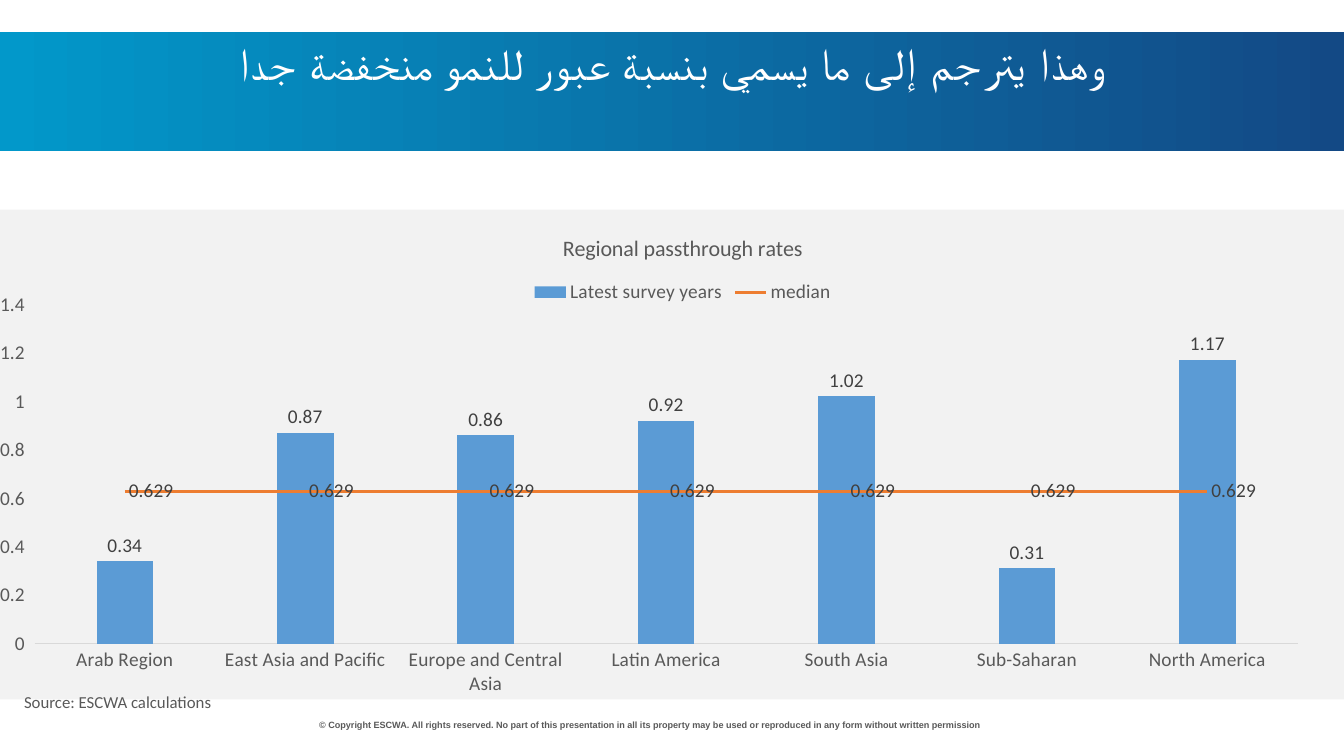
"""Build the slide on regional passthrough rates."""
from pptx import Presentation
from pptx.chart.data import CategoryChartData
from pptx.dml.color import RGBColor
from pptx.enum import chart as ch, shapes, text
from pptx.oxml import parse_xml
from pptx.oxml.ns import nsdecls, qn
from pptx.util import Inches, Pt
from lxml import etree

WHITE = RGBColor(0xFF, 0xFF, 0xFF)
CYAN = RGBColor(0x02, 0x98, 0xCA)
NAVY = RGBColor(0x13, 0x49, 0x85)
PANEL = RGBColor(0xF2, 0xF2, 0xF2)
GREY = RGBColor(0x59, 0x59, 0x59)
DARK = RGBColor(0x40, 0x40, 0x40)
RULE = RGBColor(0xD9, 0xD9, 0xD9)
BLUE = RGBColor(0x5B, 0x9B, 0xD5)
ORANGE = RGBColor(0xED, 0x7D, 0x31)

REGIONS = ["Arab Region", "East Asia and Pacific", "Europe and Central Asia",
           "Latin America", "South Asia", "Sub-Saharan", "North America"]
RATES = [0.34, 0.87, 0.86, 0.92, 1.02, 0.31, 1.17]
MEDIAN = 0.629


def add_run(p, words, size, font="Calibri", color=GREY, bold=False):
    r = p.add_run()
    r.text = words
    r.font.size = Pt(size)
    r.font.name = font
    r.font.color.rgb = color
    r.font.bold = bold
    return r


prs = Presentation()
prs.slide_width, prs.slide_height = Inches(13.33), Inches(7.5)
slide = prs.slides.add_slide(prs.slide_layouts[5])
title = slide.shapes.title

for top, height in [(0.32, 1.18), (2.08, 4.86)]:
    sp = slide.shapes.add_shape(shapes.MSO_SHAPE.RECTANGLE, 0, Inches(top),
                                prs.slide_width, Inches(height))
    sp.shadow.inherit = False
    sp.line.fill.background()
    if top < 1:
        sp.fill.gradient()
        sp.fill.gradient_angle = 0
        for stop, color in zip(sp.fill.gradient_stops, (CYAN, NAVY)):
            stop.color.rgb = color
    else:
        sp.fill.solid()
        sp.fill.fore_color.rgb = PANEL
    title.element.addprevious(sp.element)

title.left, title.top = 0, Inches(0.36)
title.width, title.height = prs.slide_width, Inches(0.5)
tf = title.text_frame
tf.auto_size = text.MSO_AUTO_SIZE.NONE
tf.vertical_anchor = text.MSO_ANCHOR.TOP
p = tf.paragraphs[0]
p.alignment = text.PP_ALIGN.CENTER
p.line_spacing = 0.9
p._p.get_or_add_pPr().set("rtl", "1")
for words, font in [("وهذا يترجم إلى", "Arial"),
                    (" ما يسمي بنسبة عبور للنمو ", "Calibri"),
                    ("منخفضة جدا", "Arial")]:
    r = add_run(p, words, 32, font, WHITE)
    rPr = r._r.get_or_add_rPr()
    rPr.set("spc", "80")
    etree.SubElement(rPr, qn("a:cs")).set("typeface", font)

data = CategoryChartData()
data.categories = REGIONS
data.add_series("Latest survey years", RATES)
data.add_series("median", [MEDIAN] * len(REGIONS))
chart = slide.shapes.add_chart(ch.XL_CHART_TYPE.COLUMN_CLUSTERED, 0, Inches(2.12),
                               prs.slide_width, Inches(4.78), data).chart
chart.font.size = Pt(14)
chart.font.name = "Calibri"
chart.font.color.rgb = GREY
chart.has_title = True
add_run(chart.chart_title.text_frame.paragraphs[0], "Regional passthrough rates", 16)
chart.has_legend = True
chart.legend.position = ch.XL_LEGEND_POSITION.TOP
chart.legend.include_in_layout = False

cat_axis, val_axis = chart.category_axis, chart.value_axis
cat_axis.major_tick_mark = ch.XL_TICK_MARK.NONE
cat_axis.format.line.color.rgb = RULE
cat_axis.crosses = ch.XL_AXIS_CROSSES.MAXIMUM
val_axis.minimum_scale, val_axis.maximum_scale, val_axis.major_unit = 0, 1.4, 0.2
val_axis.has_major_gridlines = False
val_axis.major_tick_mark = ch.XL_TICK_MARK.OUTSIDE
val_axis.format.line.fill.background()

bars = chart.plots[0]
bars.gap_width = 219
bars.vary_by_categories = False
rates, median = bars.series
bar_chart, median_ser = rates._element.getparent(), median._element
for invert in median_ser.findall(qn("c:invertIfNegative")):
    median_ser.remove(invert)
line_chart = parse_xml(f'<c:lineChart {nsdecls("c")}><c:grouping val="standard"/>'
                       '<c:varyColors val="0"/><c:marker val="1"/></c:lineChart>')
line_chart.insert(2, median_ser)
for ax in bar_chart.findall(qn("c:axId")):
    etree.SubElement(line_chart, qn("c:axId")).set("val", ax.get("val"))
bar_chart.addnext(line_chart)

median = chart.plots[1].series[0]
rates.format.fill.solid()
rates.format.fill.fore_color.rgb = BLUE
median.format.line.color.rgb = ORANGE
median.format.line.width = Pt(2.25)
median.marker.style = ch.XL_MARKER_STYLE.NONE
median.smooth = False
for series, position in [(rates, ch.XL_LABEL_POSITION.OUTSIDE_END),
                         (median, ch.XL_LABEL_POSITION.RIGHT)]:
    labels = series.data_labels
    labels.show_value = True
    labels.position = position
    labels.font.size = Pt(14)
    labels.font.name = "Calibri"
    labels.font.color.rgb = DARK

plot_area = bar_chart.getparent()
for old in plot_area.findall(qn("c:layout")):
    plot_area.remove(old)
sides = "".join(f'<c:{side} val="{value}"/>' for side, value in
                [("xMode", "edge"), ("yMode", "edge"), ("x", 0.01), ("y", 0.19),
                 ("w", 0.955), ("h", 0.71)])
plot_area.insert(0, parse_xml(
    f'<c:layout {nsdecls("c")}><c:manualLayout><c:layoutTarget val="inner"/>'
    f'{sides}</c:manualLayout></c:layout>'))

for words, box, align, style in [
        ("© Copyright ESCWA. All rights reserved. No part of this presentation in all its "
         "property may be used or reproduced in any form without written permission",
         (2.58, 7.09, 7.74, 0.21), text.PP_ALIGN.CENTER,
         {"size": 6.5, "font": "Arial", "bold": True}),
        ("Source: ESCWA calculations", (0.14, 6.81, 2.16, 0.3), text.PP_ALIGN.LEFT,
         {"size": 12})]:
    tf = slide.shapes.add_textbox(*map(Inches, box)).text_frame
    tf.word_wrap = True
    tf.auto_size = text.MSO_AUTO_SIZE.SHAPE_TO_FIT_TEXT
    p = tf.paragraphs[0]
    p.alignment = align
    add_run(p, words, **style)

prs.save("out.pptx")
